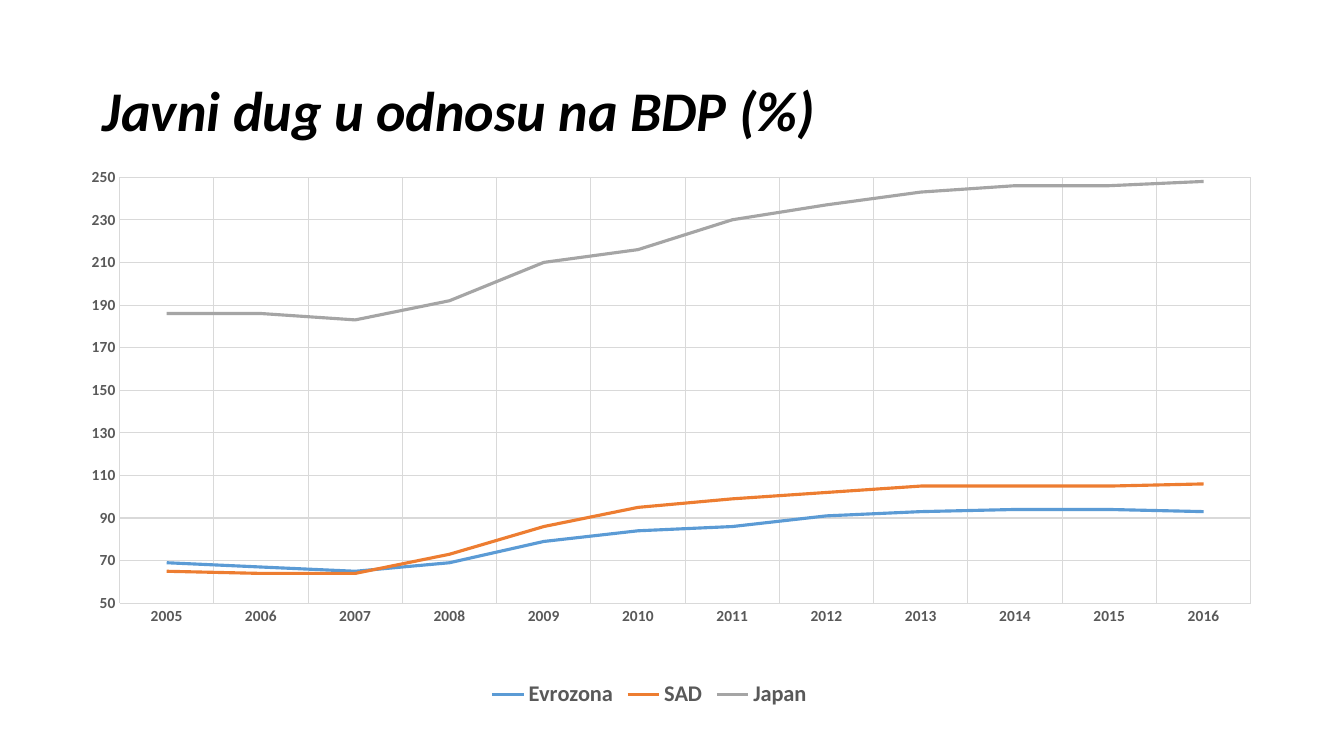
"""Build a slide with a line chart of public debt relative to GDP."""
from lxml.etree import SubElement
from pptx import Presentation
from pptx.chart.data import CategoryChartData
from pptx.dml.color import RGBColor
from pptx.enum.chart import XL_CHART_TYPE, XL_LEGEND_POSITION, XL_TICK_MARK
from pptx.enum.text import MSO_ANCHOR, PP_ALIGN
from pptx.oxml.ns import qn
from pptx.util import Inches, Pt

INK, GREY, GRID = "000000", "595959", "D9D9D9"
DEBT = {
    "Evrozona": ("5B9BD5", [69, 67, 65, 69, 79, 84, 86, 91, 93, 94, 94, 93]),
    "SAD": ("ED7D31", [65, 64, 64, 73, 86, 95, 99, 102, 105, 105, 105, 106]),
    "Japan": ("A5A5A5", [186, 186, 183, 192, 210, 216, 230, 237, 243, 246, 246, 248]),
}


def paint(color, code):
    color.rgb = RGBColor.from_string(code)


def style(font, code, **attrs):
    for key, val in {"name": "Calibri", **attrs}.items():
        setattr(font, key, val)
    paint(font.color, code)


deck = Presentation()
deck.slide_width, deck.slide_height = Inches(13.33), Inches(7.5)
slide = deck.slides.add_slide(deck.slide_layouts[5])

title = slide.shapes.title
box = {"left": 0.92, "top": 0.4, "width": 11.5, "height": 1.45}
for key, val in box.items():
    setattr(title, key, Inches(val))
title.text_frame.text = "Javni dug u odnosu na BDP (%)"
title.text_frame.vertical_anchor = MSO_ANCHOR.MIDDLE
line = title.text_frame.paragraphs[0]
line.alignment, line.line_spacing = PP_ALIGN.LEFT, 0.9
style(line.runs[0].font, INK, size=Pt(40), bold=True, italic=True)

data = CategoryChartData(number_format="0")
data.categories = [str(year) for year in range(2005, 2017)]
for name, (code, vals) in DEBT.items():
    data.add_series(name, vals)
place = [Inches(n) for n in (0.47, 1.65, 11.94, 5.42)]
chart = slide.shapes.add_chart(XL_CHART_TYPE.LINE, *place, data).chart
style(chart.font, INK, size=Pt(10))
chart.has_title = False

chart.has_legend = True
legend = chart.legend
legend.position, legend.include_in_layout = XL_LEGEND_POSITION.BOTTOM, False
style(legend.font, GREY, size=Pt(16), bold=True)

years, scale = chart.category_axis, chart.value_axis
for axis in (years, scale):
    axis.major_tick_mark = axis.minor_tick_mark = XL_TICK_MARK.NONE
    axis.has_major_gridlines = True
    style(axis.tick_labels.font, GREY, size=Pt(11), bold=True)
    for rule in (axis.major_gridlines.format.line, axis.format.line):
        rule.width = Pt(0.75)
        paint(rule.color, GRID)
scale.format.line.fill.background()
limits = {"minimum_scale": 50, "maximum_scale": 250, "major_unit": 20}
for key, val in limits.items():
    setattr(scale, key, val)
scale.tick_labels.number_format = "0"
scale.tick_labels.number_format_is_linked = False

plot = chart.plots[0]
plot.vary_by_categories = False
for series in plot.series:
    series.smooth = False
    series.format.line.width = Pt(2.25)
    paint(series.format.line.color, DEBT[series.name][0])

area = chart.element.find(".//" + qn("c:plotArea"))
for old in area.findall(qn("c:layout")):
    area.remove(old)
layout = SubElement(area, qn("c:layout"))
area.insert(0, layout)
manual = SubElement(layout, qn("c:manualLayout"))
frame = {"layoutTarget": "inner", "xMode": "edge", "yMode": "edge",
         "x": 0.06, "y": 0.02, "w": 0.94, "h": 0.78}
for key, val in frame.items():
    SubElement(manual, qn("c:" + key)).set("val", str(val))

deck.save("out.pptx")
